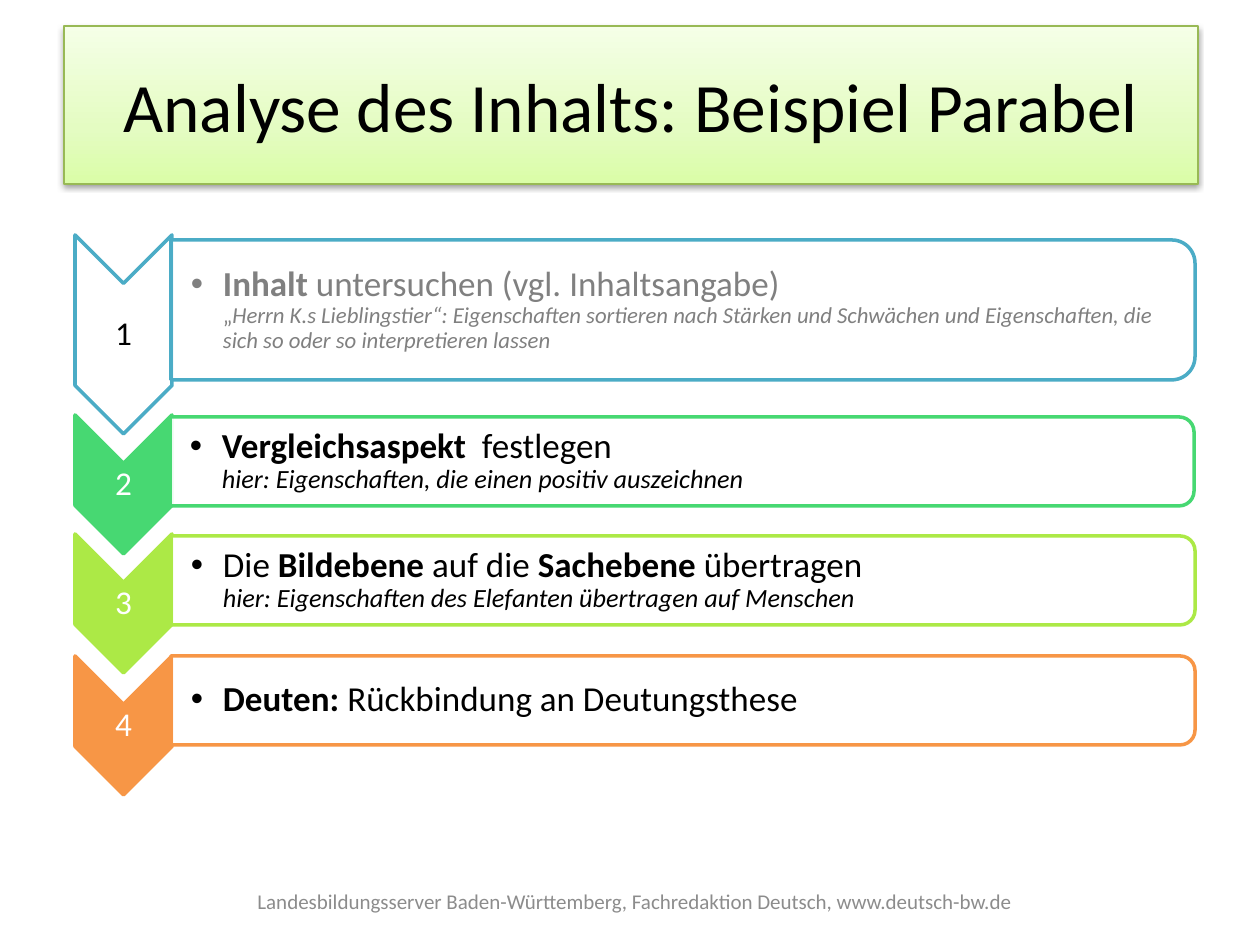
from copy import deepcopy
from dataclasses import dataclass

from lxml.etree import SubElement
from pptx import Presentation
from pptx.dml.color import RGBColor
from pptx.enum.shapes import MSO_SHAPE
from pptx.enum.text import MSO_ANCHOR, MSO_AUTO_SIZE, PP_ALIGN
from pptx.oxml.ns import qn
from pptx.util import Pt

EMU_PER_PX = 914400 / 126


@dataclass(frozen=True)
class Theme:
    font: str = "Calibri"
    black: str = "000000"
    white: str = "FFFFFF"
    muted: str = "808080"
    footer: str = "8C8C8C"
    blue: str = "4BACC6"
    green: str = "47D872"
    lime: str = "ACE946"
    orange: str = "F79646"
    title_line: str = "98B955"
    title_stops: tuple = ((0, "DAFDA7"), (0.35, "E4FCC2"), (1, "F5FFE7"))
    title_size: float = 39.6
    step_size: int = 20
    number_size: int = 19
    example_size: int = 15
    small_size: int = 13
    footer_size: int = 12


THEME = Theme()


@dataclass(frozen=True)
class Step:
    top: int
    height: int
    panel_left: int
    panel_top: int
    panel_height: int
    line: str
    fill: str
    number_color: str
    text_color: str
    heading: tuple
    example: tuple = ()
    example_size: int = THEME.example_size


CHEVRON_LEFT, CHEVRON_WIDTH, PANEL_WIDTH = 75, 97, 1024

STEPS = (
    Step(235, 199, 171, 240, 140, THEME.blue, THEME.white, THEME.black, THEME.muted,
         (("Inhalt", "b"), (" untersuchen (vgl. Inhaltsangabe)", "")),
         (("„", ""), ("Herrn K.s Lieblingstier“: Eigenschaften sortieren nach Stärken und Schwächen "
                      "und Eigenschaften, die sich so oder so interpretieren lassen", "i")),
         THEME.small_size),
    Step(415, 139, 170, 417, 89, THEME.green, THEME.green, THEME.white, THEME.black,
         (("Vergleichsaspekt ", "b"), (" festlegen", "")),
         (("hier: Eigenschaften, die einen positiv auszeichnen", "i"),)),
    Step(534, 139, 171, 536, 89, THEME.lime, THEME.lime, THEME.white, THEME.black,
         (("Die ", ""), ("Bildebene", "b"), (" auf die ", ""), ("Sachebene", "b"), (" übertragen", "")),
         (("hier: Eigenschaften des Elefanten übertragen auf Menschen", "i"),)),
    Step(656, 139, 171, 656, 89, THEME.orange, THEME.orange, THEME.white, THEME.black,
         (("Deuten: ", "b"), ("Rückbindung an Deutungsthese", ""))),
)


def px(length):
    return round(length * EMU_PER_PX)


def rgb(value):
    return RGBColor.from_string(value)


def add_span(para, text, *, size, color, bold=False, italic=False):
    span = para.add_run()
    span.text = text
    font = span.font
    font.name, font.size, font.bold, font.italic = THEME.font, Pt(size), bold, italic
    font.color.rgb = rgb(color)


def add_text_box(shapes, left, top, width, height, margins=None):
    box = shapes.add_textbox(px(left), px(top), px(width), px(height))
    frame = box.text_frame
    frame.word_wrap = True
    frame.vertical_anchor = MSO_ANCHOR.MIDDLE
    if margins:
        frame.margin_left, frame.margin_top, frame.margin_right, frame.margin_bottom = map(px, margins)
    return frame.paragraphs[0]


def add_turned_shape(shapes, kind, left, top, width, height, *, fill, line):
    shift = (width - height) / 2
    shape = shapes.add_shape(kind, px(left + shift), px(top - shift), px(height), px(width))
    shape.rotation = 90
    shape.shadow.inherit = False
    shape.fill.solid()
    shape.fill.fore_color.rgb = rgb(fill)
    shape.line.color.rgb = rgb(line)
    shape.line.width = Pt(2)
    return shape


def add_alpha(color, percent):
    SubElement(color, qn("a:alpha"), val=str(percent * 1000))


def add_bullet(para):
    properties = para._p.get_or_add_pPr()
    properties.set("marL", str(px(32)))
    properties.set("indent", str(px(-32)))
    SubElement(properties, qn("a:buFont"), typeface="Arial")
    SubElement(properties, qn("a:buChar"), char="•")


def add_number(shapes, step, number):
    notch = CHEVRON_WIDTH // 2
    add_turned_shape(shapes, MSO_SHAPE.CHEVRON, CHEVRON_LEFT, step.top, CHEVRON_WIDTH, step.height,
                     fill=step.fill, line=step.line)
    para = add_text_box(shapes, CHEVRON_LEFT, step.top + notch, CHEVRON_WIDTH,
                        step.height - 2 * notch, margins=(1, 1, 1, 1))
    para.alignment = PP_ALIGN.CENTER
    para.line_spacing, para.space_after = 0.9, Pt(7)
    add_span(para, str(number), size=THEME.number_size, color=step.number_color)


def add_panel(shapes, step):
    panel = add_turned_shape(shapes, MSO_SHAPE.ROUND_2_SAME_RECTANGLE, step.panel_left, step.panel_top,
                             PANEL_WIDTH, step.panel_height, fill=THEME.white, line=step.line)
    add_alpha(panel._element.spPr.find(qn("a:solidFill"))[0], 90)
    inset = round(step.panel_height * 0.05)
    para = add_text_box(shapes, step.panel_left, step.panel_top + inset, PANEL_WIDTH - inset,
                        step.panel_height - 2 * inset, margins=(20, 1, 1, 1))
    para.line_spacing, para.space_after = 0.9, Pt(3)
    add_bullet(para)
    for text, style in step.heading:
        add_span(para, text, size=THEME.step_size, color=step.text_color, bold=style == "b")
    if step.example:
        para.add_line_break()
    for text, style in step.example:
        add_span(para, text, size=step.example_size, color=step.text_color, italic=style == "i")


def add_title(page, text):
    title = page.shapes.title
    title.left, title.top, title.width, title.height = map(px, (64, 26, 1134, 158))
    title.fill.gradient()
    title.fill.gradient_angle = 90
    stop_list = title._element.spPr.find(qn("a:gradFill")).find(qn("a:gsLst"))
    stop_list.insert(1, deepcopy(stop_list[0]))
    for stop, (position, color) in zip(title.fill.gradient_stops, THEME.title_stops):
        stop.position = position
        stop.color.rgb = rgb(color)
    title.line.color.rgb = rgb(THEME.title_line)
    title.line.width = Pt(0.75)
    effects = SubElement(title._element.spPr, qn("a:effectLst"))
    shadow = SubElement(effects, qn("a:outerShdw"), blurRad=str(Pt(3.1)), dist=str(Pt(1.6)),
                        dir="5400000", rotWithShape="0")
    add_alpha(SubElement(shadow, qn("a:srgbClr"), val=THEME.black), 38)
    frame = title.text_frame
    frame.auto_size = MSO_AUTO_SIZE.NONE
    frame.vertical_anchor = MSO_ANCHOR.MIDDLE
    para = frame.paragraphs[0]
    para.alignment = PP_ALIGN.CENTER
    add_span(para, text, size=THEME.title_size, color=THEME.black)


def add_footer(page, text):
    para = add_text_box(page.shapes, 174, 876, 922, 50)
    para.alignment = PP_ALIGN.CENTER
    add_span(para, text, size=THEME.footer_size, color=THEME.footer)


def main():
    deck = Presentation()
    deck.slide_width, deck.slide_height = px(1260), px(945)
    page = deck.slides.add_slide(deck.slide_layouts[5])
    add_title(page, "Analyse des Inhalts: Beispiel Parabel")
    add_footer(page, "Landesbildungsserver Baden-Württemberg, Fachredaktion Deutsch, www.deutsch-bw.de")
    steps = page.shapes.add_group_shape().shapes
    for number, step in enumerate(STEPS, start=1):
        add_number(steps, step, number)
        add_panel(steps, step)
    deck.save("out.pptx")


if __name__ == "__main__":
    main()
